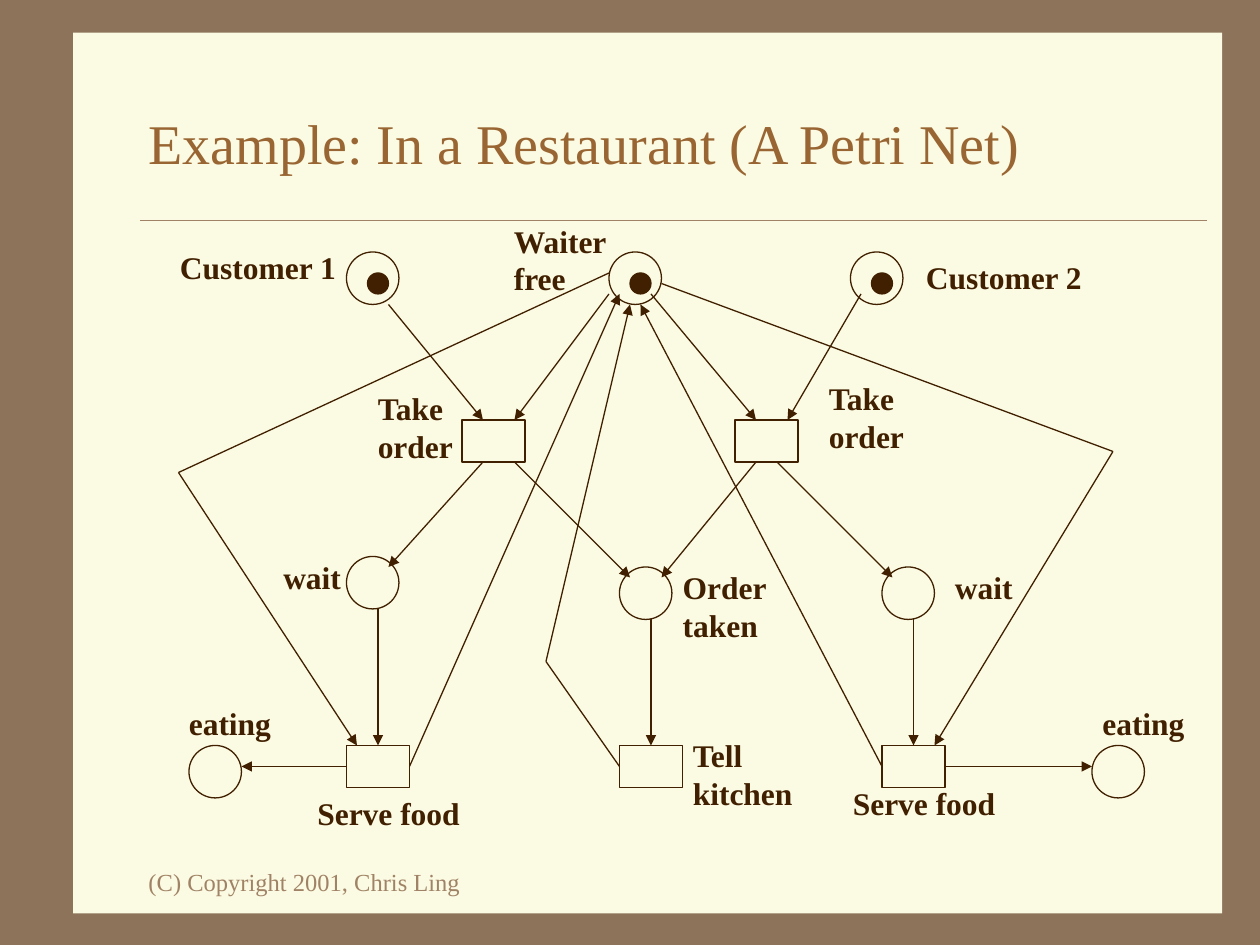
from pptx import Presentation
from pptx.dml.color import RGBColor
from pptx.enum.shapes import MSO_CONNECTOR, MSO_SHAPE
from pptx.enum.text import MSO_ANCHOR
from pptx.oxml.ns import qn
from pptx.util import Inches, Pt
from lxml import etree

LINE = MSO_CONNECTOR.STRAIGHT
RECT, OVAL = MSO_SHAPE.RECTANGLE, MSO_SHAPE.OVAL
MIDDLE = MSO_ANCHOR.MIDDLE
TOP, LEFT, RIGHT = 0, 1, 3  # rectangle sides

BROWN = RGBColor(0x8C, 0x73, 0x5A)
CREAM = RGBColor(0xFB, 0xFA, 0xE2)
TAN = RGBColor(0xA0, 0x83, 0x66)
RUST = RGBColor(0x99, 0x66, 0x33)
DARK = RGBColor(0x40, 0x20, 0x00)
FONT = "Times New Roman"

# The net lies on a grid of twelfths of an inch
CELL = Inches(1) // 12

# Places: column, row, holds a token
PLACES = [
    (18, 0, True), (43, 0, True), (66, 0, True),
    (18, 29, False), (44, 30, False), (69, 30, False),
    (3, 47, False), (89, 47, False),
]

# Transitions: column, row
STEPS = {
    "take 1": (29, 16), "take 2": (55, 16),
    "serve 1": (18, 47), "tell": (44, 47), "serve 2": (69, 47),
}

# Arcs run through grid points or (transition, side); the last leg has the head
ARCS = [
    [(22, 5), (31, 16)],
    [(43, 4), (34, 16)],
    [(47, 4), (57, 16)],
    [(67, 4), (60, 16)],
    [(31, 20), (22, 30)],
    [(34, 20), (45, 31)],
    [(57, 20), (48, 31)],
    [(59, 20), (70, 31)],
    [(21, 34), ("serve 1", TOP)],
    [(47, 35), ("tell", TOP)],
    [(72, 35), ("serve 2", TOP)],
    [("serve 1", LEFT), (8, 49)],
    [("serve 2", RIGHT), (89, 49)],
    [("serve 1", RIGHT), (44, 4)],
    [("serve 2", LEFT), (46, 5)],
    [("tell", LEFT), (37, 39), (45, 5)],
    [(43, 2), (2, 21), (19, 47)],
    [(48, 3), (91, 19), (74, 47)],
]

# Labels: text, then left, top, width in inches from the corner of the net
LABELS = [
    ("Customer 1", 0.08, -0.08, 1.44), ("Waiter\nfree", 2.73, -0.29, 0.95),
    ("Customer 2", 6, 0, 1.44),
    ("Take\norder", 1.65, 1.04, 0.8), ("Take\norder", 5.23, 0.96, 0.8),
    ("wait", 0.9, 2.38, 0.66), ("Order\ntaken", 4.07, 2.46, 0.87),
    ("wait", 6.23, 2.46, 0.66),
    ("eating", 0.15, 3.54, 0.85), ("eating", 7.4, 3.54, 0.85),
    ("Serve food", 1.17, 4.25, 1.33), ("Tell\nkitchen", 4.15, 3.79, 0.99),
    ("Serve food", 5.42, 4.17, 1.33),
]


def add_form(slide, kind, box, fill=None, line=None):
    form = slide.shapes.add_shape(kind, *box)
    form.shadow.inherit = False
    if fill is None:
        form.fill.background()
    else:
        form.fill.solid()
        form.fill.fore_color.rgb = fill
    if line is None:
        form.line.fill.background()
    else:
        form.line.color.rgb = line
        form.line.width = Pt(0.75)
    return form


def add_line(slide, start, end, color, width, head=False):
    line = slide.shapes.add_connector(LINE, *start, *end)
    line.line.color.rgb = color
    line.line.width = Pt(width)
    props = line.element.spPr
    if head:
        tail = etree.SubElement(props.find(qn("a:ln")), qn("a:tailEnd"))
        tail.set("type", "triangle")
    etree.SubElement(props, qn("a:effectLst"))
    return line


def add_text(slide, box, text, size, color, bold=False, wrap=True):
    area = slide.shapes.add_textbox(*box)
    frame = area.text_frame
    frame.word_wrap = wrap
    frame.text = text
    for para in frame.paragraphs:
        font = para.font
        font.name, font.size, font.bold = FONT, Pt(size), bold
        font.color.rgb = color
    return frame


def add_page(slide, box):
    """Cream page with title, rule and footer."""
    left, top, width, height = box
    add_form(slide, RECT, box, fill=CREAM)
    title = add_text(slide, (left + Inches(0.5), top + Inches(0.24), Inches(8.5), Inches(1.25)),
                     "Example: In a Restaurant (A Petri Net)", 32, RUST)
    title.vertical_anchor = MIDDLE
    rule = top + Inches(1.49)
    add_line(slide, (left + Inches(0.53), rule), (left + width - Inches(0.12), rule), TAN, 0.25)
    add_text(slide, (left + Inches(0.5), top + height - Inches(0.42), Inches(2.75), Inches(0.33)),
             "(C) Copyright 2001, Chris Ling", 14, TAN)


def add_net(slide, left, top):
    """Petri net of places, transitions, arcs and labels."""
    def spot(col, row):
        return left + col * CELL, top + row * CELL

    def area(col, row, wide, high):
        return (*spot(col, row), wide * CELL, high * CELL)

    # Places and tokens
    for col, row, token in PLACES:
        add_form(slide, OVAL, area(col, row, 5, 5), line=DARK)
        if token:
            add_form(slide, OVAL, area(col + 2, row + 2, 2, 2), fill=DARK, line=DARK)

    # Transitions
    steps = {name: add_form(slide, RECT, area(*cell, 6, 4), line=DARK)
             for name, cell in STEPS.items()}

    def locate(end):
        name, side = end
        if name not in STEPS:
            return spot(*end)
        col, row = STEPS[name]
        across, down = {TOP: (3, 0), LEFT: (0, 2), RIGHT: (6, 2)}[side]
        return spot(col + across, row + down)

    # Arcs
    for arc in ARCS:
        for start, end in zip(arc, arc[1:]):
            line = add_line(slide, locate(start), locate(end), DARK, 0.75, end is arc[-1])
            if start[0] in steps:
                line.begin_connect(steps[start[0]], start[1])
            if end[0] in steps:
                line.end_connect(steps[end[0]], end[1])

    # Labels
    for text, x, y, width in LABELS:
        high = 0.7 if "\n" in text else 0.4
        box = (left + Inches(x), top + Inches(y), Inches(width), Inches(high))
        add_text(slide, box, text, 18, DARK, bold=True, wrap=False)


def main():
    deck = Presentation()
    deck.slide_width, deck.slide_height = Inches(10), Inches(7.5)
    slide = deck.slides.add_slide(deck.slide_layouts[6])
    slide.background.fill.solid()
    slide.background.fill.fore_color.rgb = BROWN
    add_page(slide, (Inches(0.58), Inches(0.26), Inches(9.12), Inches(6.99)))
    add_net(slide, Inches(1.25), Inches(2))
    deck.save("out.pptx")


if __name__ == "__main__":
    main()
